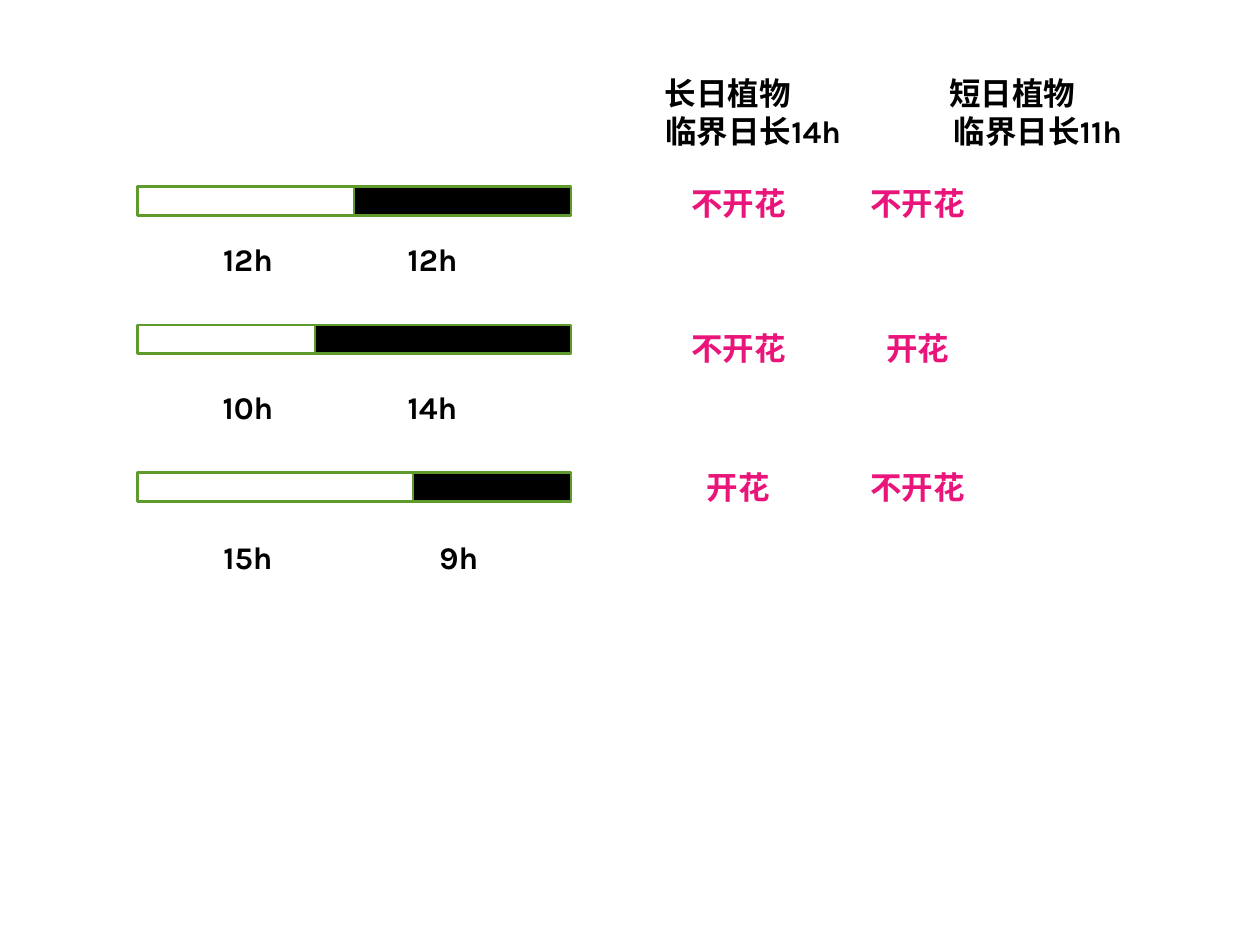
from lxml import etree
from pptx import Presentation
from pptx.dml.color import RGBColor
from pptx.enum import shapes, text
from pptx.oxml.ns import qn
from pptx.util import Cm, Pt

COLORS = {"day": "FFFFFF", "night": "000000", "outline": "5E9B2C",
          "label": "000000", "result": "EA157A"}
LABEL_FONT, RESULT_FONT = "Karla", "Noto Sans CJK SC"

prs = Presentation()
prs.slide_width, prs.slide_height = Cm(25.4), Cm(19.05)
slide = prs.slides.add_slide(prs.slide_layouts[6])


def add_text(left, top, width, height, lines, font_name, color):
    """Add a bold text box and return its paragraphs."""
    frame = slide.shapes.add_textbox(Cm(left), Cm(top), Cm(width), Cm(height)).text_frame
    frame.word_wrap = True
    frame.text = "\n".join(lines)
    for paragraph in frame.paragraphs:
        font = paragraph.font
        font.name, font.size, font.bold = font_name, Pt(18), True
        font.color.rgb = RGBColor.from_string(COLORS[color])
        if font_name == RESULT_FONT:
            properties = paragraph.runs[0]._r.get_or_add_rPr()
            etree.SubElement(properties, qn("a:ea"), typeface=font_name)
    return frame.paragraphs


def center_on_tabs(paragraph, *positions):
    """Add centred tab stops, in centimetres from the text edge."""
    tabs = etree.Element(qn("a:tabLst"))
    for position in positions:
        etree.SubElement(tabs, qn("a:tab"), pos=str(Cm(position)), algn="ctr")
    paragraph._p.get_or_add_pPr().insert(0, tabs)


# Plant types with their critical day length
for left, plant, critical in ((12.9, "长日植物", "临界日长14h"),
                              (18.64, "短日植物", "临界日长11h")):
    name_line, critical_line = add_text(left, 1.37, 4.57, 1.8, (plant, critical),
                                        LABEL_FONT, "label")
    name_line._p.get_or_add_pPr().set("marL", str(Cm(0.25)))
    critical_line.alignment = text.PP_ALIGN.CENTER

# Light regimes: bar top, day and night widths, hours top, hours,
# centre of night hours, results top, results
regimes = (
    (3.76, 4.37, 4.37, 4.72, ("12h", "12h"), 5.5, 3.58, ("不开花", "不开花")),
    (6.55, 3.58, 5.16, 7.7, ("10h", "14h"), 5.5, 6.5, ("不开花", "开花")),
    (9.53, 5.56, 3.58, 10.72, ("15h", "9h"), 6.03, 9.32, ("开花", "不开花")),
)
bar_left, bar_right, bar_height = 2.77, 11.51, 0.58

for bar_top, day, night, hours_top, hours, night_center, results_top, results in regimes:
    # Day and night bar, with the day part in front
    bar = slide.shapes.add_group_shape()
    for part, left, width in (("night", bar_right - night, night), ("day", bar_left, day)):
        segment = bar.shapes.add_shape(shapes.MSO_SHAPE.RECTANGLE, Cm(left), Cm(bar_top),
                                       Cm(width), Cm(bar_height))
        segment.shadow.inherit = False
        segment.fill.solid()
        segment.fill.fore_color.rgb = RGBColor.from_string(COLORS[part])
        segment.line.color.rgb = RGBColor.from_string(COLORS["outline"])
        segment.line.width = Pt(1.5)

    # Hours of light and dark
    hours_line, = add_text(2.97, hours_top, 8.53, 1.02, ["\t" + "\t".join(hours)],
                           LABEL_FONT, "label")
    center_on_tabs(hours_line, 1.78, night_center)

    # Flowering of long-day and short-day plants
    results_line, = add_text(13.69, results_top, 9.73, 1.02, ["\t" + "\t".join(results)],
                             RESULT_FONT, "result")
    center_on_tabs(results_line, 0.94, 4.56)

prs.save("out.pptx")
